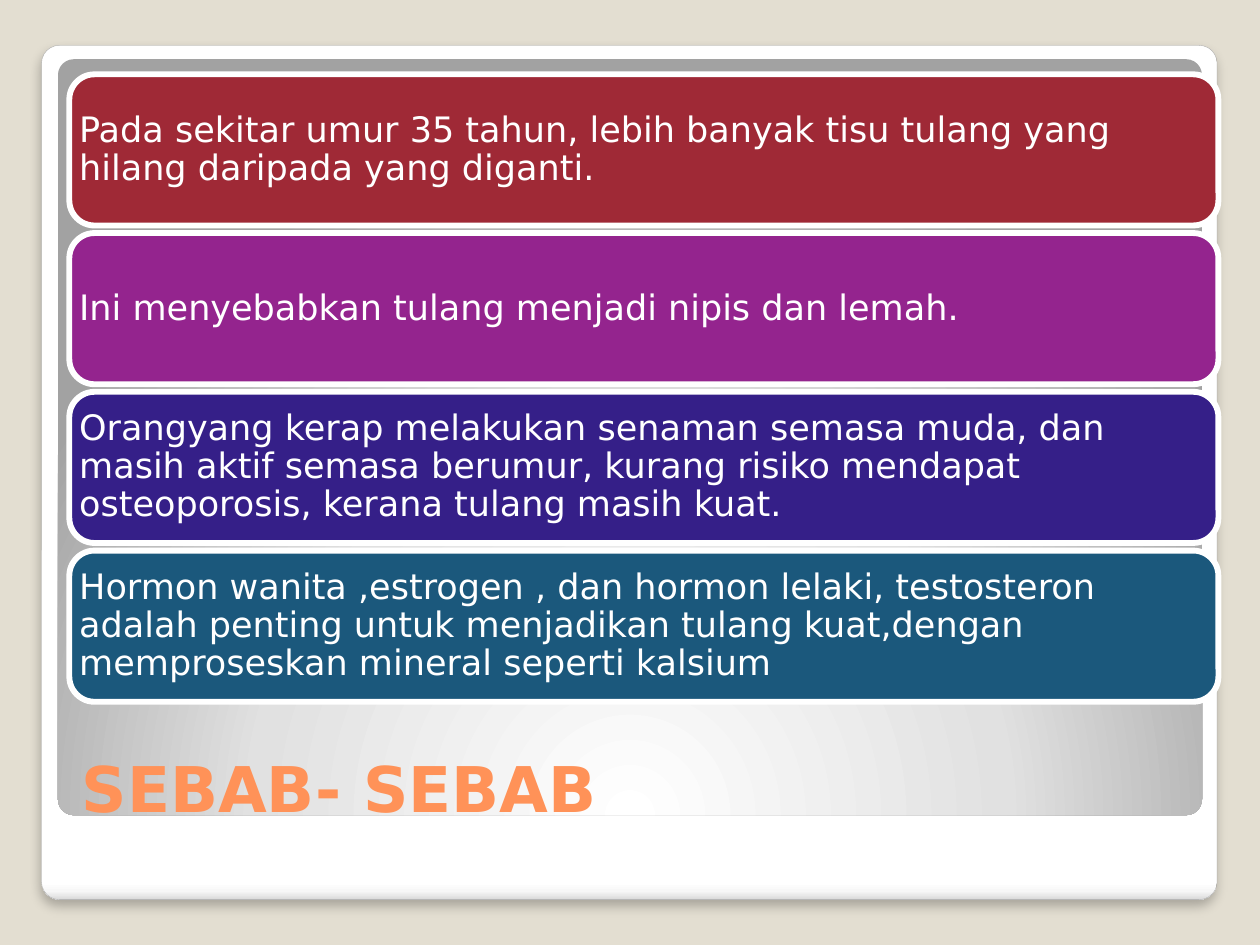
from lxml import etree
from pptx import Presentation
from pptx import util as u
from pptx.dml.color import RGBColor
from pptx.enum import shapes, text
from pptx.oxml import parse_xml
from pptx.oxml.ns import qn, nsdecls

THEME = {
    "font": "DejaVu Sans", "title_size": 36, "body_size": 20,
    "back": "E3DED1", "title": "FF9258", "white": "FFFFFF", "edge": "A4A4A4",
    "shade": "000000",
    "bars": ["9F2936", "94248E", "351F88", "1B587C"],
    "frame": [(0, "FFFFFF"), (98, "FFFFFF"), (99, "F7F7F7"), (100, "DADADA")],
    "panel": [(0, "FFFFFF"), (55, "E1E1E1"), (100, "A2A2A2")],
}
rgb = RGBColor.from_string


def add_box(left, top, width, height):
    box = slide.shapes.add_shape(
        shapes.MSO_SHAPE.ROUNDED_RECTANGLE,
        u.Inches(left), u.Inches(top), u.Inches(width), u.Inches(height))
    box.shadow.inherit = False
    return box


def add_blend(box, stops, shade):
    marks = "".join(f'<a:gs pos="{pos * 1000}"><a:srgbClr val="{tint}"/></a:gs>'
                    for pos, tint in stops)
    blend = parse_xml(f'<a:gradFill {nsdecls("a")} rotWithShape="1">'
                      f'<a:gsLst>{marks}</a:gsLst>{shade}</a:gradFill>')
    box._element.spPr.find(qn("a:prstGeom")).addnext(blend)


deck = Presentation()
deck.slide_width, deck.slide_height = u.Inches(10), u.Inches(7.5)
slide = deck.slides.add_slide(deck.slide_layouts[5])
slide.background.fill.solid()
slide.background.fill.fore_color.rgb = rgb(THEME["back"])

# White frame with a soft shadow
frame = add_box(0.33, 0.36, 9.33, 6.78)
frame.adjustments[0] = 0.021
frame.line.color.rgb = rgb(THEME["edge"])
frame.line.width = u.Pt(0.16)
add_blend(frame, THEME["frame"], '<a:lin ang="5400000" scaled="0"/>')
glow = etree.SubElement(
    frame._element.spPr.find(qn("a:effectLst")), qn("a:outerShdw"),
    blurRad=str(u.Pt(6)), dist=str(u.Pt(4)), dir="5400000",
    algn="t", rotWithShape="0")
tint = etree.SubElement(glow, qn("a:srgbClr"), val=THEME["shade"])
etree.SubElement(tint, qn("a:alpha"), val="25000")

# Grey panel lit from below
panel = add_box(0.46, 0.47, 9.08, 6)
panel.adjustments[0] = 0.021
panel.line.fill.background()
add_blend(panel, THEME["panel"],
          '<a:path path="circle"><a:fillToRect l="50000" t="175000" '
          'r="50000" b="-75000"/></a:path>')

# Title, brought in front of the panel
title = slide.shapes.title
title.left, title.top = u.Inches(0.55), u.Inches(5.45)
title.width, title.height = u.Inches(8.95), u.Inches(1.15)
slide.shapes._spTree.append(title._element)
title.text_frame.text = "SEBAB- SEBAB"
title.text_frame.vertical_anchor = text.MSO_ANCHOR.BOTTOM
head = title.text_frame.paragraphs[0]
head.alignment = text.PP_ALIGN.LEFT
head.font.name = THEME["font"]
head.font.size = u.Pt(THEME["title_size"])
head.font.bold = True
head.font.color.rgb = rgb(THEME["title"])

# Four stacked bars, one cause each
causes = [
    "Pada sekitar umur 35 tahun, lebih banyak tisu tulang yang hilang "
    "daripada yang diganti.",
    "Ini menyebabkan tulang menjadi nipis dan lemah.",
    "Orangyang kerap melakukan senaman semasa muda, dan masih aktif semasa "
    "berumur, kurang risiko mendapat osteoporosis, kerana tulang masih kuat.",
    "Hormon wanita ,estrogen , dan hormon lelaki, testosteron adalah penting "
    "untuk menjadikan tulang kuat,dengan memproseskan mineral seperti kalsium",
]
for row, (cause, hue) in enumerate(zip(causes, THEME["bars"])):
    bar = add_box(0.55, 0.59 + 1.26 * row, 9.12, 1.2)
    bar.adjustments[0] = 0.1667
    bar.fill.solid()
    bar.fill.fore_color.rgb = rgb(hue)
    bar.line.color.rgb = rgb(THEME["white"])
    bar.line.width = u.Pt(3.35)
    body = bar.text_frame
    body.word_wrap = True
    body.vertical_anchor = text.MSO_ANCHOR.MIDDLE
    body.margin_left = body.margin_right = u.Inches(0.02)
    body.margin_top = body.margin_bottom = u.Inches(0.02)
    body.text = cause
    para = body.paragraphs[0]
    para.alignment = text.PP_ALIGN.LEFT
    para.line_spacing = 0.9
    para.font.name = THEME["font"]
    para.font.size = u.Pt(THEME["body_size"])
    para.font.color.rgb = rgb(THEME["white"])

deck.save("out.pptx")
